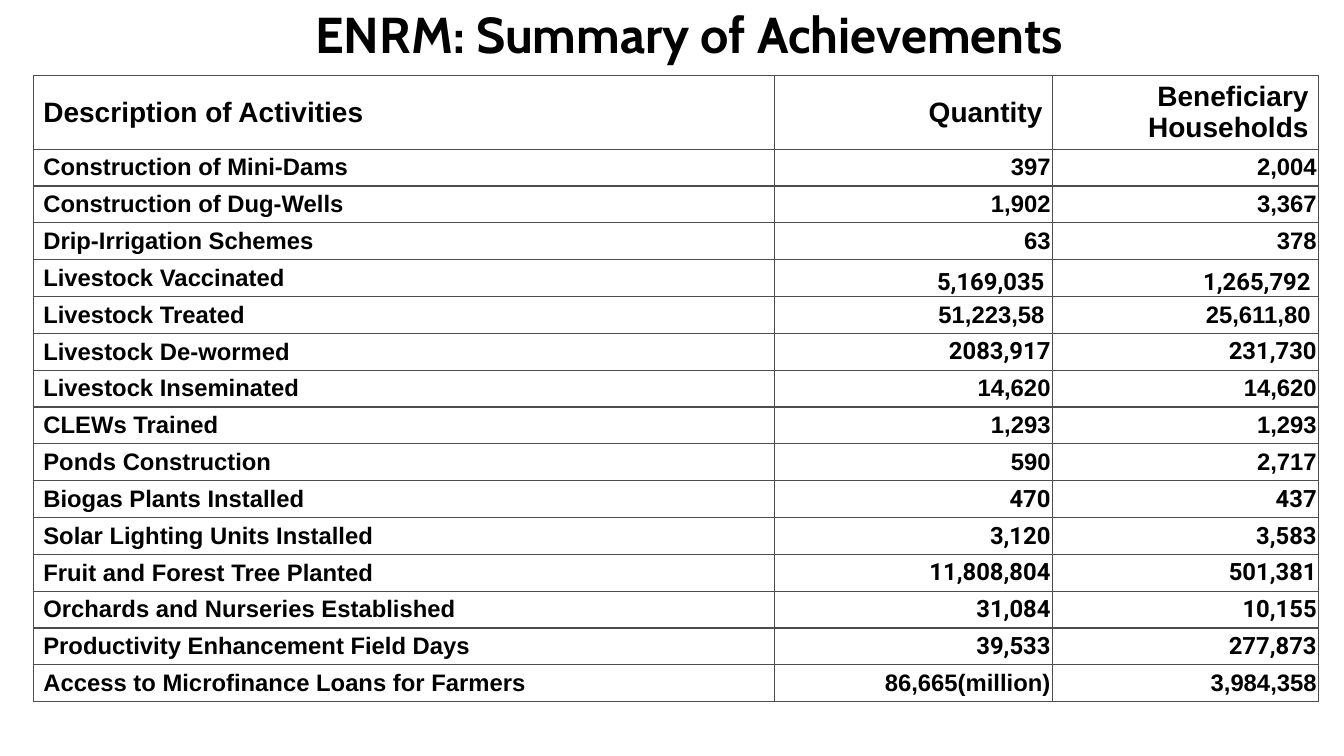
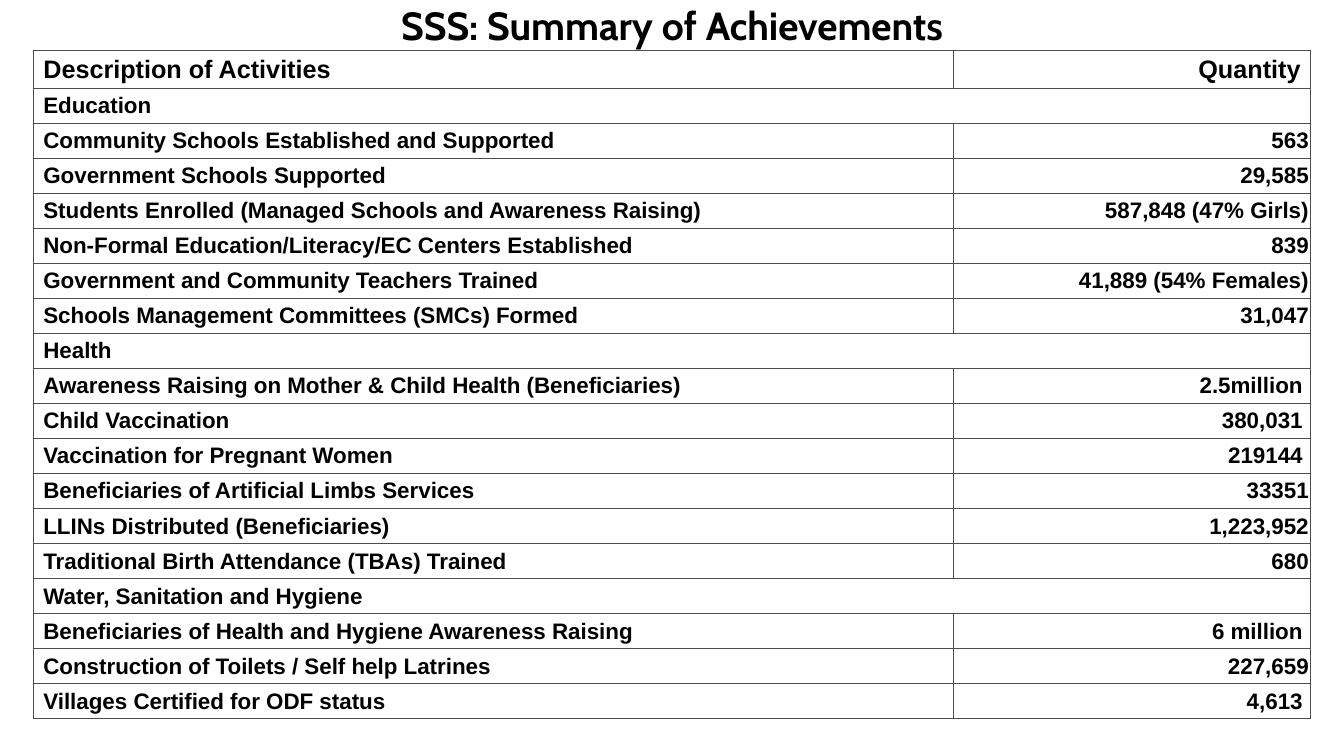
"""Build two slides of programme achievements, each a title over a table."""
import pptx
import pptx.util
import pptx.dml.color
import pptx.enum.text
import pptx.oxml
import pptx.oxml.ns

Inches, Pt = pptx.util.Inches, pptx.util.Pt
ALIGN = pptx.enum.text.PP_ALIGN
ANCHOR = pptx.enum.text.MSO_ANCHOR
BLACK = pptx.dml.color.RGBColor(0x00, 0x00, 0x00)
WHITE = pptx.dml.color.RGBColor(0xFF, 0xFF, 0xFF)
GRAY = pptx.dml.color.RGBColor(0x4D, 0x4D, 0x4D)
HEAD_FONT, BODY_FONT, ALT_FONT = "Cabin", "Arial", "Roboto"
LEFT = 0.33

ENRM = [
    ("Description of Activities", "Quantity", "Beneficiary Households"),
    ("Construction of Mini-Dams", "397", "2,004"),
    ("Construction of Dug-Wells", "1,902", "3,367"),
    ("Drip-Irrigation Schemes", "63", "378"),
    ("Livestock Vaccinated", "5,169,035", "1,265,792"),
    ("Livestock Treated", "51,223,58", "25,611,80"),
    ("Livestock De-wormed", "2083,917", "231,730"),
    ("Livestock Inseminated", "14,620", "14,620"),
    ("CLEWs Trained", "1,293", "1,293"),
    ("Ponds Construction", "590", "2,717"),
    ("Biogas Plants Installed", "470", "437"),
    ("Solar Lighting Units Installed", "3,120", "3,583"),
    ("Fruit and Forest Tree Planted", "11,808,804", "501,381"),
    ("Orchards and Nurseries Established", "31,084", "10,155"),
    ("Productivity Enhancement Field Days", "39,533", "277,873"),
    ("Access to Microfinance Loans for Farmers", "86,665(million)", "3,984,358"),
]
SSS = [
    ("Description of Activities", "Quantity"),
    ("Education",),
    ("Community Schools Established and Supported", "563"),
    ("Government Schools Supported", "29,585"),
    ("Students Enrolled (Managed Schools and Awareness Raising)", "587,848 (47% Girls)"),
    ("Non-Formal Education/Literacy/EC Centers Established", "839"),
    ("Government and Community Teachers Trained", "41,889 (54% Females)"),
    ("Schools Management Committees (SMCs) Formed", "31,047"),
    ("Health",),
    ("Awareness Raising on Mother & Child Health (Beneficiaries)", "2.5million"),
    ("Child Vaccination", "380,031"),
    ("Vaccination for Pregnant Women", "219144"),
    ("Beneficiaries of Artificial Limbs Services", "33351"),
    ("LLINs Distributed (Beneficiaries)", "1,223,952"),
    ("Traditional Birth Attendance (TBAs) Trained", "680"),
    ("Water, Sanitation and Hygiene",),
    ("Beneficiaries of Health and Hygiene Awareness Raising", "6 million"),
    ("Construction of Toilets / Self help Latrines", "227,659"),
    ("Villages Certified for ODF status", "4,613"),
]
PAGES = [
    dict(title="ENRM: Summary of Achievements", box=(2.17, 0, 9.33, 0.67), title_size=36,
         rows=ENRM, top=0.75, cols=(7.35, 2.76, 2.64), head=0.73, row=0.36,
         head_size=20, size=17, inset={4, 5}, low={4}, alt={4, 6, 10, 11, 12, 13, 14}),
    dict(title="SSS: Summary of Achievements", box=(LEFT, 0, 12.67, 0.5), title_size=28,
         rows=SSS, top=0.5, cols=(9.13, 3.54), head=0.38, row=0.34,
         head_size=18, size=16, inset={9, 10, 11, 16, 18}, low=set(), alt=set()),
]


def write(par, text, face, size, align):
    """Add one bold run to a paragraph."""
    par.alignment = align
    run = par.add_run()
    run.text = text
    font = run.font
    font.name, font.size, font.bold = face, Pt(size), True
    font.color.rgb = BLACK


def frame(cell):
    """Draw thin lines on all four sides of a cell."""
    props = cell._tc.get_or_add_tcPr()
    for spot, side in enumerate(("lnL", "lnR", "lnT", "lnB")):
        line = pptx.oxml.parse_xml(
            f'<a:{side} {pptx.oxml.ns.nsdecls("a")} w="{Pt(1)}"><a:solidFill>'
            f'<a:srgbClr val="{GRAY}"/></a:solidFill></a:{side}>')
        props.insert(spot, line)


def add_title(slide, page):
    """Place and format the slide title."""
    title = slide.shapes.title
    title.left, title.top, title.width, title.height = map(Inches, page["box"])
    text = title.text_frame
    text.word_wrap = True
    text.auto_size = pptx.enum.text.MSO_AUTO_SIZE.NONE
    text.vertical_anchor = ANCHOR.MIDDLE
    write(text.paragraphs[0], page["title"], HEAD_FONT, page["title_size"], ALIGN.CENTER)


def add_grid(slide, page):
    """Add the table of activities and figures."""
    rows, cols = page["rows"], page["cols"]
    tall = page["head"] + page["row"] * (len(rows) - 1)
    grid = slide.shapes.add_table(len(rows), len(cols), Inches(LEFT), Inches(page["top"]),
                                  Inches(sum(cols)), Inches(tall)).table
    grid.first_row = grid.horz_banding = False
    for col, width in zip(grid.columns, cols):
        col.width = Inches(width)
    for r, row in enumerate(rows):
        grid.rows[r].height = Inches(page["row"] if r else page["head"])
        if len(row) == 1:
            grid.cell(r, 0).merge(grid.cell(r, len(cols) - 1))
        for c in range(len(cols)):
            cell = grid.cell(r, c)
            cell.fill.solid()
            cell.fill.fore_color.rgb = WHITE
            frame(cell)
            cell.vertical_anchor = ANCHOR.MIDDLE
            if r and c:
                cell.margin_left = Inches(0.02)
                cell.margin_right = Inches(0.08 if r in page["inset"] else 0.02)
                cell.margin_top = cell.margin_bottom = 0
                if r in page["low"]:
                    cell.vertical_anchor = ANCHOR.BOTTOM
            par = cell.text_frame.paragraphs[0]
            if c < len(row):
                write(par, row[c], ALT_FONT if c and r in page["alt"] else BODY_FONT,
                      page["size"] if r else page["head_size"],
                      ALIGN.RIGHT if c else ALIGN.LEFT)
            else:
                par.font.size = Pt(page["size"])


def main():
    """Build and save the deck."""
    deck = pptx.Presentation()
    deck.slide_width, deck.slide_height = Inches(13.33), Inches(7.5)
    for page in PAGES:
        slide = deck.slides.add_slide(deck.slide_layouts[5])
        add_title(slide, page)
        add_grid(slide, page)
    deck.save("out.pptx")


if __name__ == "__main__":
    main()
